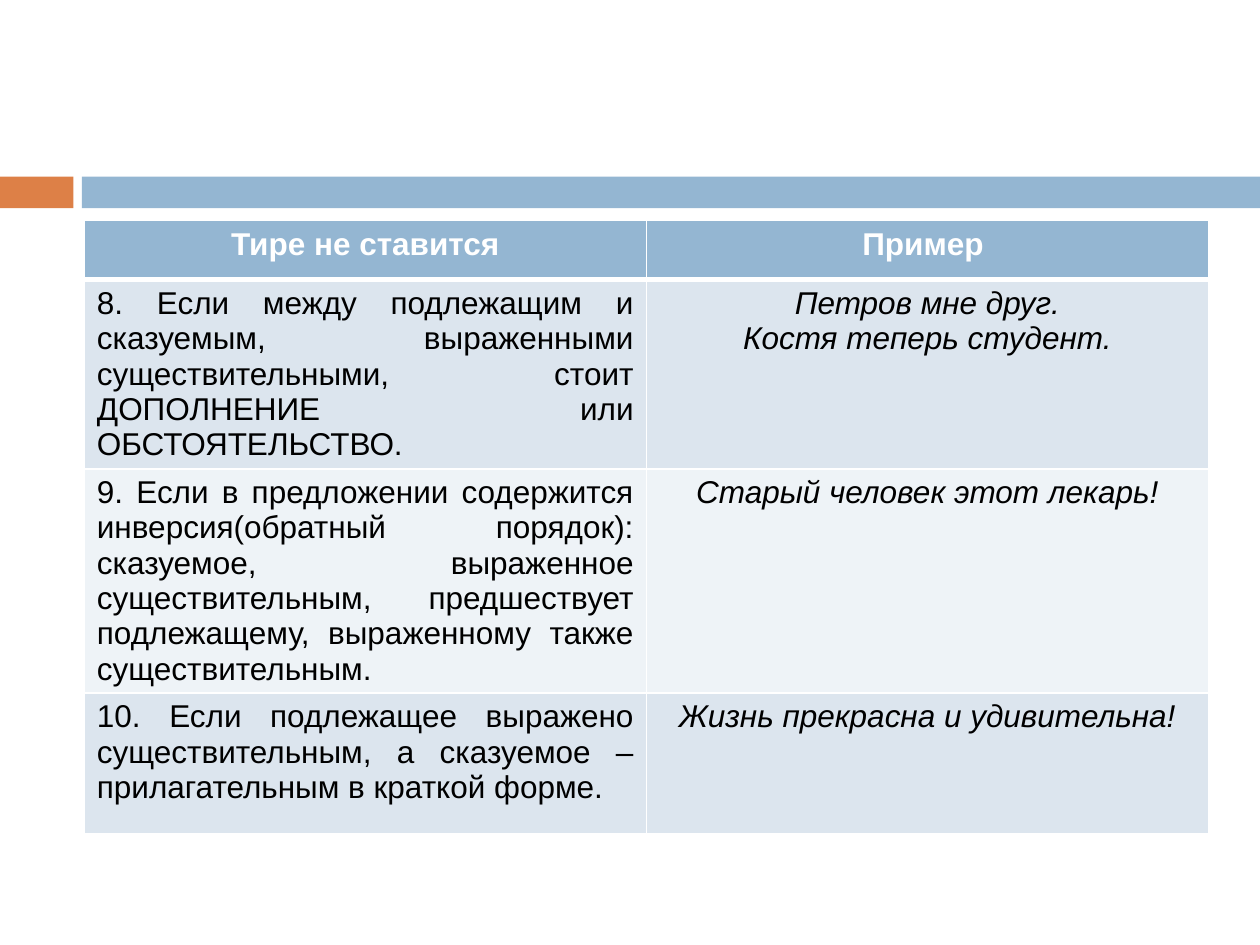
from lxml import etree
from pptx import Presentation
from pptx.dml.color import RGBColor
from pptx.enum import shapes, text
from pptx.oxml import ns
from pptx.util import Cm, Pt

COLORS = {
    "orange": "DD8047",
    "blue": "94B6D2",
    "band_dark": "DCE5EE",
    "band_light": "EEF3F7",
    "white": "FFFFFF",
    "black": "000000",
}
ROWS = [
    ("Тире не ставится", ["Пример "]),
    ("8. Если между подлежащим и сказуемым, выраженными существительными, "
     "стоит ДОПОЛНЕНИЕ или ОБСТОЯТЕЛЬСТВО.",
     ["Петров мне друг.", "Костя теперь студент."]),
    ("9. Если в предложении содержится инверсия(обратный порядок): сказуемое, "
     "выраженное существительным, предшествует подлежащему, выраженному также "
     "существительным.",
     ["Старый человек этот лекарь!"]),
    ("10. Если подлежащее выражено существительным, а сказуемое – "
     "прилагательным в краткой форме.",
     ["Жизнь прекрасна и удивительна!"]),
]


def rgb(name):
    return RGBColor.from_string(COLORS[name])


def add_border(cell, side, width):
    tcPr = cell._tc.get_or_add_tcPr()
    ln = etree.SubElement(tcPr, ns.qn(f"a:ln{side}"), w=str(Pt(width)))
    fill = etree.SubElement(ln, ns.qn("a:solidFill"))
    etree.SubElement(fill, ns.qn("a:srgbClr"), val=COLORS["white"])


prs = Presentation()
prs.slide_width, prs.slide_height = Cm(25.4), Cm(19.05)
s = prs.slides.add_slide(prs.slide_layouts[6])

for left, width, color in [(0, 1.48, "orange"), (1.65, 23.75, "blue")]:
    sp = s.shapes.add_shape(shapes.MSO_SHAPE.RECTANGLE,
                            Cm(left), Cm(3.56), Cm(width), Cm(0.64))
    sp.shadow.inherit = False
    sp.fill.solid()
    sp.fill.fore_color.rgb = rgb(color)
    sp.line.fill.background()

table = s.shapes.add_table(len(ROWS), 2, Cm(1.7), Cm(4.45),
                           Cm(22.66), Cm(9.71)).table
for row in table.rows:
    row.height = Cm(2.84)
table.rows[0].height = Cm(1.19)

for i, (rule, examples) in enumerate(ROWS):
    header = i == 0
    for j, lines in enumerate([[rule], examples]):
        cell = table.cell(i, j)
        for side in "LRTB":
            thick = (i, side) in [(0, "B"), (1, "T")]
            add_border(cell, side, 3 if thick else 1)
        cell.fill.solid()
        cell.fill.fore_color.rgb = rgb(
            "blue" if header else "band_dark" if i % 2 else "band_light")
        tf = cell.text_frame
        tf.text = "\n".join(lines)
        for p in tf.paragraphs:
            p.alignment = (text.PP_ALIGN.CENTER if header or j
                           else text.PP_ALIGN.JUSTIFY)
            p.font.name = "Arial"
            p.font.size = Pt(18)
            p.font.bold = header
            p.font.italic = bool(j) and not header
            p.font.color.rgb = rgb("white" if header else "black")

prs.save("out.pptx")
